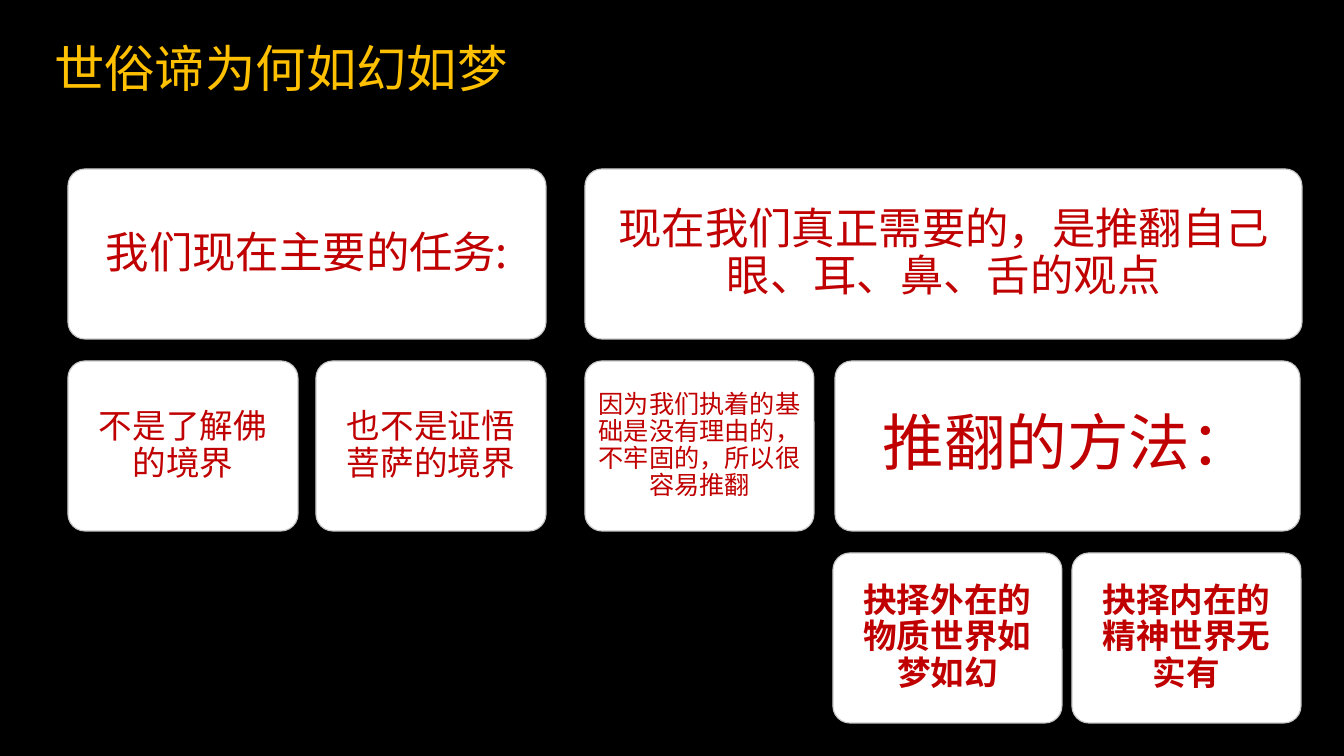
import pptx
import pptx.util
import pptx.dml.color
import pptx.enum.shapes
import pptx.enum.text
import pptx.oxml
import pptx.oxml.ns

RGBColor = pptx.dml.color.RGBColor
BLACK = RGBColor(0x00, 0x00, 0x00)
WHITE = RGBColor(0xFF, 0xFF, 0xFF)
GOLD = RGBColor(0xFF, 0xC0, 0x00)
RED = RGBColor(0xC0, 0x00, 0x00)
CARD_EDGE = RGBColor(0xC9, 0xC9, 0xC9)

FONT = "Noto Sans CJK SC"
EMU_PER_PX = 12192000 / 1344

# Card rows
FIRST_ROW_TOP = 169
ROW_STEP = 192
CARD_HEIGHT = 170

# Row, left, width, text size, bold, text
CARDS = [
    (0, 68, 478, 31, False, "我们现在主要的任务:"),
    (1, 68, 230, 24, False, "不是了解佛的境界"),
    (1, 316, 230, 24, False, "也不是证悟菩萨的境界"),
    (0, 585, 717, 31, False, "现在我们真正需要的，是推翻自己眼、耳、鼻、舌的观点"),
    (1, 585, 229, 18, False, "因为我们执着的基础是没有理由的，不牢固的，所以很容易推翻"),
    (1, 835, 465, 44, False, "推翻的方法："),
    (2, 833, 229, 24, True, "抉择外在的物质世界如梦如幻"),
    (2, 1072, 229, 24, True, "抉择内在的精神世界无实有"),
]


def px(length):
    return pptx.util.Emu(round(length * EMU_PER_PX))


def write(frame, text, size, color, align, anchor, spacing, insets, bold=False):
    """Fill a text frame with one formatted paragraph."""
    frame.word_wrap = True
    frame.auto_size = pptx.enum.text.MSO_AUTO_SIZE.NONE
    frame.vertical_anchor = anchor
    side, edge = insets
    frame.margin_left = frame.margin_right = px(side)
    frame.margin_top = frame.margin_bottom = px(edge)
    paragraph = frame.paragraphs[0]
    paragraph.alignment = align
    paragraph.line_spacing = spacing
    run = paragraph.add_run()
    run.text = text
    run.font.size = pptx.util.Pt(size)
    run.font.bold = bold
    run.font.color.rgb = color
    run.font.name = FONT
    # East Asian typeface follows the Latin one
    east_asian = pptx.oxml.parse_xml(
        f'<a:ea {pptx.oxml.ns.nsdecls("a")} typeface="{FONT}"/>')
    run.font._element.find(pptx.oxml.ns.qn("a:latin")).addnext(east_asian)


def add_title(slide, text):
    title = slide.shapes.title
    title.left, title.top, title.width, title.height = map(px, (41, 17, 1138, 87))
    write(title.text_frame, text, 36, GOLD, pptx.enum.text.PP_ALIGN.LEFT,
          pptx.enum.text.MSO_ANCHOR.BOTTOM, 0.8, (13, 7))


def add_card(slide, row, left, width, size, bold, text):
    top = FIRST_ROW_TOP + row * ROW_STEP
    card = slide.shapes.add_shape(
        pptx.enum.shapes.MSO_SHAPE.ROUNDED_RECTANGLE,
        px(left), px(top), px(width), px(CARD_HEIGHT))
    card.adjustments[0] = 0.1
    card.shadow.inherit = False
    card.fill.solid()
    card.fill.fore_color.rgb = WHITE
    card.line.color.rgb = CARD_EDGE
    card.line.width = pptx.util.Pt(0.85)
    # Margins grow with the text size
    inset = int(size * 0.42)
    write(card.text_frame, text, size, RED, pptx.enum.text.PP_ALIGN.CENTER,
          pptx.enum.text.MSO_ANCHOR.MIDDLE, 0.9, (inset, inset), bold)


def main():
    deck = pptx.Presentation()
    deck.slide_width, deck.slide_height = px(1344), px(756)
    slide = deck.slides.add_slide(deck.slide_layouts[5])
    slide.background.fill.solid()
    slide.background.fill.fore_color.rgb = BLACK

    add_title(slide, "世俗谛为何如幻如梦")
    for card in CARDS:
        add_card(slide, *card)

    deck.save("out.pptx")


if __name__ == "__main__":
    main()
